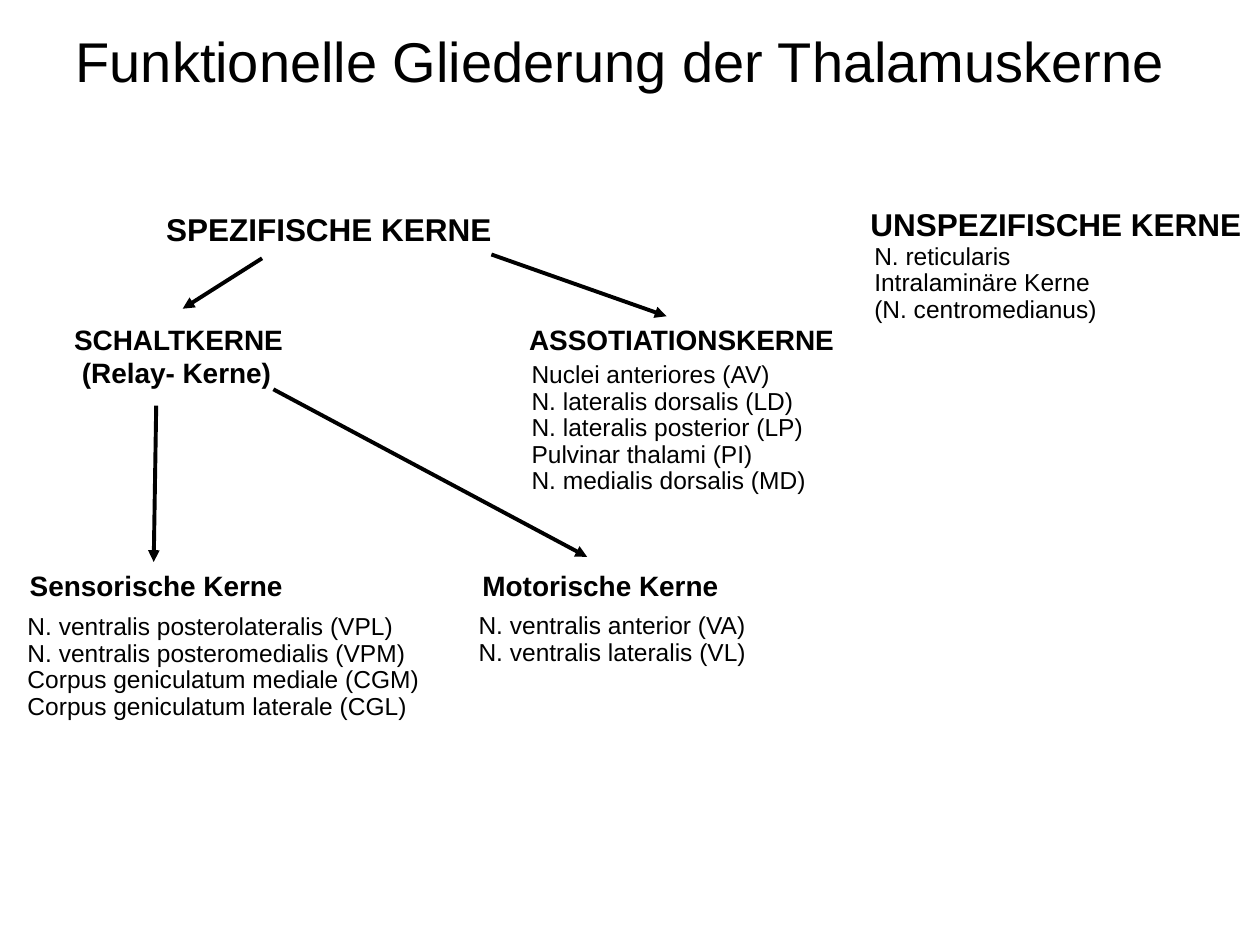
import dataclasses

import pptx
import pptx.dml.color
import pptx.enum.shapes
import pptx.enum.text
import pptx.oxml
import pptx.oxml.ns
import pptx.util

ALIGN = pptx.enum.text.PP_ALIGN
ANCHOR = pptx.enum.text.MSO_ANCHOR
AUTO_SIZE = pptx.enum.text.MSO_AUTO_SIZE


@dataclasses.dataclass(frozen=True)
class Theme:
    font: str = "Arial"
    ink: str = "000000"
    paper: str = "FFFFFF"
    title: int = 32
    group: int = 18
    subgroup: int = 16
    nuclei: int = 14
    arrow: float = 2.25
    list_spacing: float = 0.9
    list_indent: float = 5  # grid columns


class Diagram:
    """Draws on one slide; lengths are cells of a 100 x 75 grid."""

    COLUMNS, ROWS = 100, 75

    def __init__(self, prs, theme):
        self.prs, self.theme = prs, theme
        self.slide = prs.slides.add_slide(prs.slide_layouts[5])
        fill = self.slide.background.fill
        fill.solid()
        fill.fore_color.rgb = self.color(theme.paper)

    @staticmethod
    def color(value):
        return pptx.dml.color.RGBColor.from_string(value)

    def x(self, columns):
        return round(self.prs.slide_width * columns / self.COLUMNS)

    def y(self, rows):
        return round(self.prs.slide_height * rows / self.ROWS)

    def place(self, sp, left, top, width, height):
        sp.left, sp.top = self.x(left), self.y(top)
        sp.width, sp.height = self.x(width), self.y(height)

    def add_lines(self, tf, lines, size, bold=False, align=ALIGN.LEFT):
        for i, line in enumerate(lines):
            p = tf.add_paragraph() if i else tf.paragraphs[0]
            p.alignment = align
            r = p.add_run()
            r.text = line
            r.font.name = self.theme.font
            r.font.size = pptx.util.Pt(size)
            r.font.bold = bold
            r.font.color.rgb = self.color(self.theme.ink)

    def title(self, text, box):
        sp = self.slide.shapes.title
        self.place(sp, *box)
        tf = sp.text_frame
        tf.auto_size = AUTO_SIZE.NONE
        tf.vertical_anchor = ANCHOR.MIDDLE
        self.add_lines(tf, [text], self.theme.title, align=ALIGN.CENTER)

    def text_box(self, box, wrap):
        sp = self.slide.shapes.add_textbox(0, 0, 0, 0)
        self.place(sp, *box)
        tf = sp.text_frame
        tf.word_wrap = wrap
        tf.auto_size = AUTO_SIZE.SHAPE_TO_FIT_TEXT
        return tf

    def heading(self, lines, box, size, centered=False):
        """Centred headings wrap in their box, the others run free."""
        align = ALIGN.CENTER if centered else ALIGN.LEFT
        self.add_lines(self.text_box(box, centered), lines, size, True, align)

    def nuclei(self, lines, box, indented=True, wrap=True):
        tf = self.text_box(box, wrap)
        self.add_lines(tf, lines, self.theme.nuclei)
        for p in tf.paragraphs:
            p.line_spacing = self.theme.list_spacing
            if indented:
                p.level = 1
                pPr = p._p.get_or_add_pPr()
                pPr.set("marL", str(self.x(self.theme.list_indent)))
                pPr.set("indent", "0")

    def arrow(self, start, end):
        sp = self.slide.shapes.add_connector(
            pptx.enum.shapes.MSO_CONNECTOR.STRAIGHT,
            self.x(start[0]), self.y(start[1]), self.x(end[0]), self.y(end[1]))
        sp.line.color.rgb = self.color(self.theme.ink)
        sp.line.width = pptx.util.Pt(self.theme.arrow)
        ln = sp.line._get_or_add_ln()
        ln.append(pptx.oxml.parse_xml(
            f'<a:tailEnd {pptx.oxml.ns.nsdecls("a")} type="triangle"/>'))
        sp._element.spPr.append(pptx.oxml.parse_xml(
            f'<a:effectLst {pptx.oxml.ns.nsdecls("a")}/>'))


def main():
    prs = pptx.Presentation()
    prs.slide_width = pptx.util.Inches(10)
    prs.slide_height = pptx.util.Inches(7.5)
    theme = Theme()
    d = Diagram(prs, theme)

    d.title("Funktionelle Gliederung der Thalamuskerne", (2, 1.7, 94.5, 6.1))

    d.heading(["SPEZIFISCHE KERNE"], (12.2, 16.2, 28.1, 4), theme.group)
    d.heading(["UNSPEZIFISCHE KERNE"], (68.1, 15.8, 31.8, 4), theme.group)
    d.heading(["SCHALTKERNE", " (Relay- Kerne)"],
              (4.9, 25.1, 18.7, 6.4), theme.subgroup)
    d.heading(["ASSOTIATIONSKERNE"], (41, 25.1, 26.5, 3.7), theme.subgroup)
    d.heading(["Sensorische Kerne"], (-0.2, 44.6, 25.2, 3.7),
              theme.subgroup, centered=True)
    d.heading(["Motorische Kerne"], (35.4, 44.6, 24.5, 3.7),
              theme.subgroup, centered=True)

    for start, end in [
        ((20.8, 20.5), (14.5, 24.5)),
        ((39, 20.2), (52.9, 25.1)),
        ((12.4, 32.2), (12.2, 44.6)),
        ((21.7, 30.9), (46.6, 44.2)),
    ]:
        d.arrow(start, end)

    d.nuclei(["N. ventralis posterolateralis (VPL)",
              "N. ventralis posteromedialis (VPM)",
              "Corpus geniculatum mediale (CGM)",
              "Corpus geniculatum laterale (CGL)"], (-3.8, 48.3, 40.6, 9.5))
    d.nuclei(["N. ventralis anterior (VA)",
              "N. ventralis lateralis (VL)"], (32, 48.2, 50, 5.3))
    d.nuclei(["Nuclei anteriores (AV)",
              "N. lateralis dorsalis (LD)",
              "N. lateralis posterior (LP)",
              "Pulvinar thalami (PI)",
              "N. medialis dorsalis (MD)"], (36.2, 28.3, 28.9, 18), wrap=False)
    d.nuclei(["N. reticularis",
              "Intralaminäre Kerne",
              "(N. centromedianus)"], (68.4, 18.9, 20.1, 7.4), indented=False)

    prs.save("out.pptx")


if __name__ == "__main__":
    main()
